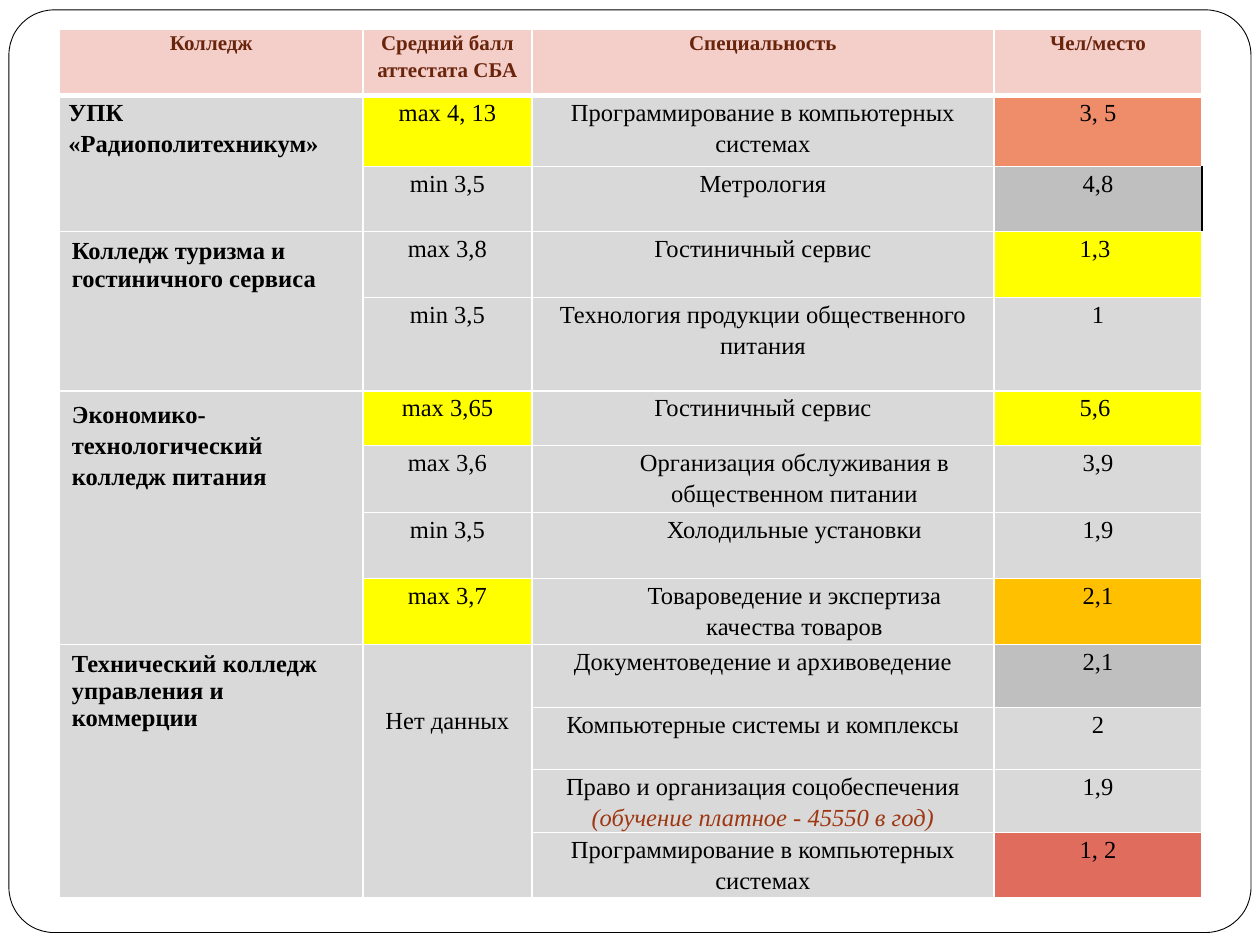
"""Build a slide with a table of colleges, grades and competition per place."""
import pptx
import pptx.util
import pptx.dml.color
import pptx.enum.shapes
import pptx.enum.text
import pptx.oxml
import pptx.oxml.ns

Cm, Pt = pptx.util.Cm, pptx.util.Pt
RGB = pptx.dml.color.RGBColor.from_string
ALIGN = pptx.enum.text.PP_ALIGN

HUES = {
    "white": "FFFFFF", "black": "000000", "head": "F4CEC9", "brown": "69240C",
    "pale": "D9D9D9", "gray": "BFBFBF", "yellow": "FFFF00", "coral": "EF8C6A",
    "amber": "FFC000", "red": "DF6C5D", "rust": "9E3611",
}


def write(cell, text, size=14, hue="black", bold=False, align=ALIGN.CENTER,
          space=1.15, left=0.18, top=0, indent=0, note=None):
    cell.margin_left, cell.margin_right = Cm(left), Cm(0.18)
    cell.margin_top, cell.margin_bottom = Cm(top), Cm(0)
    frame = cell.text_frame
    frame.text = text if note is None else text + "\n" + note
    for num, para in enumerate(frame.paragraphs):
        para.alignment, para.line_spacing = align, space
        if indent:
            para._p.get_or_add_pPr().set("marL", str(Cm(indent)))
            para._p.get_or_add_pPr().set("indent", "0")
        font = para.runs[0].font
        font.name, font.size, font.bold = "Times New Roman", Pt(size), bold
        font.italic = num > 0
        font.color.rgb = RGB(HUES["rust" if num else hue])


def edge(cell, side, hue, width):
    line = pptx.oxml.parse_xml(
        f'<a:ln{side} {pptx.oxml.ns.nsdecls("a")} w="{Pt(width)}"><a:solidFill>'
        f'<a:srgbClr val="{HUES[hue]}"/></a:solidFill></a:ln{side}>')
    cell._tc.get_or_add_tcPr().append(line)


deck = pptx.Presentation()
deck.slide_width, deck.slide_height = Cm(25.4), Cm(19.05)
slide = deck.slides.add_slide(deck.slide_layouts[6])

frame = slide.shapes.add_shape(
    pptx.enum.shapes.MSO_SHAPE.ROUNDED_RECTANGLE,
    Cm(0.18), Cm(0.2), Cm(25.04), Cm(18.6))
frame.adjustments[0] = 0.049
frame.shadow.inherit = False
frame.fill.solid()
frame.fill.fore_color.rgb = RGB(HUES["white"])
frame.line.color.rgb = RGB(HUES["black"])
frame.line.width = Pt(0.5)

heads = ["Колледж", "Средний балл аттестата СБА", "Специальность", "Чел/место"]
names = [
    (1, 2, "УПК «Радиополитехникум»", {}),
    (3, 4, "Колледж туризма и гостиничного сервиса",
     {"space": 1, "left": 0.25, "top": 0.13}),
    (5, 8, "Экономико-технологический колледж питания",
     {"left": 0.25, "top": 0.13}),
    (9, 12, "Технический колледж управления и коммерции",
     {"space": 1, "left": 0.25, "top": 0.13}),
]
grades = [
    ("max 4, 13", "yellow"), ("min 3,5", "pale"), ("max 3,8", "pale"),
    ("min 3,5", "pale"), ("max 3,65", "yellow"), ("max 3,6", "pale"),
    ("min 3,5", "pale"), ("max 3,7", "yellow"),
]
skills = [
    ("Программирование в компьютерных системах", "3, 5", "coral", {}),
    ("Метрология", "4,8", "gray", {}),
    ("Гостиничный сервис", "1,3 ", "yellow", {}),
    ("Технология продукции общественного питания", "1", "pale", {}),
    ("Гостиничный сервис", "5,6 ", "yellow", {}),
    ("Организация обслуживания в общественном питании", "3,9", "pale",
     {"indent": 1.27}),
    ("Холодильные установки", "1,9", "pale", {"indent": 1.27}),
    ("Товароведение и экспертиза качества товаров", "2,1", "amber",
     {"indent": 1.27}),
    ("Документоведение и архивоведение", "2,1", "gray", {}),
    ("Компьютерные системы и комплексы", "2", "pale", {}),
    ("Право и организация соцобеспечения", "1,9", "pale",
     {"note": "(обучение платное - 45550 в год)"}),
    ("Программирование в компьютерных системах", "1, 2", "red", {}),
]
wides = [6.12, 3.4, 9.32, 4.19]
highs = [1.35, 1.43, 1.31, 1.33, 1.88, 1.1, 1.35, 1.33, 1.33,
         1.27, 1.25, 1.27, 1.31]

table = slide.shapes.add_table(
    len(highs), len(wides), Cm(1.2), Cm(0.58),
    Cm(sum(wides)), Cm(sum(highs))).table
for col, wide in zip(table.columns, wides):
    col.width = Cm(wide)
for row, high in zip(table.rows, highs):
    row.height = Cm(high)

fills = {(num, 1): hue for num, (text, hue) in enumerate(grades, 1)}
fills.update({(num, 3): item[2] for num, item in enumerate(skills, 1)})
for row in range(len(highs)):
    for col in range(len(wides)):
        cell = table.cell(row, col)
        dark = (row, col) == (2, 3)
        edge(cell, "L", "white", 1)
        edge(cell, "R", "black" if dark else "white", 1)
        edge(cell, "T", "white", 3 if row == 1 else 1)
        edge(cell, "B", "white", 3 if row == 0 else 1)
        cell.fill.solid()
        hue = "head" if row == 0 else fills.get((row, col), "pale")
        cell.fill.fore_color.rgb = RGB(HUES[hue])

for col, text in enumerate(heads):
    write(table.cell(0, col), text, size=12, hue="brown", bold=True)
for first, last, text, style in names:
    table.cell(first, 0).merge(table.cell(last, 0))
    write(table.cell(first, 0), text, bold=True, align=ALIGN.LEFT, **style)
for row, (text, hue) in enumerate(grades, 1):
    write(table.cell(row, 1), text)
table.cell(9, 1).merge(table.cell(12, 1))
write(table.cell(9, 1), "Нет данных", top=1.2)
for row, (text, rate, hue, style) in enumerate(skills, 1):
    write(table.cell(row, 2), text, **style)
    write(table.cell(row, 3), rate)

deck.save("out.pptx")
